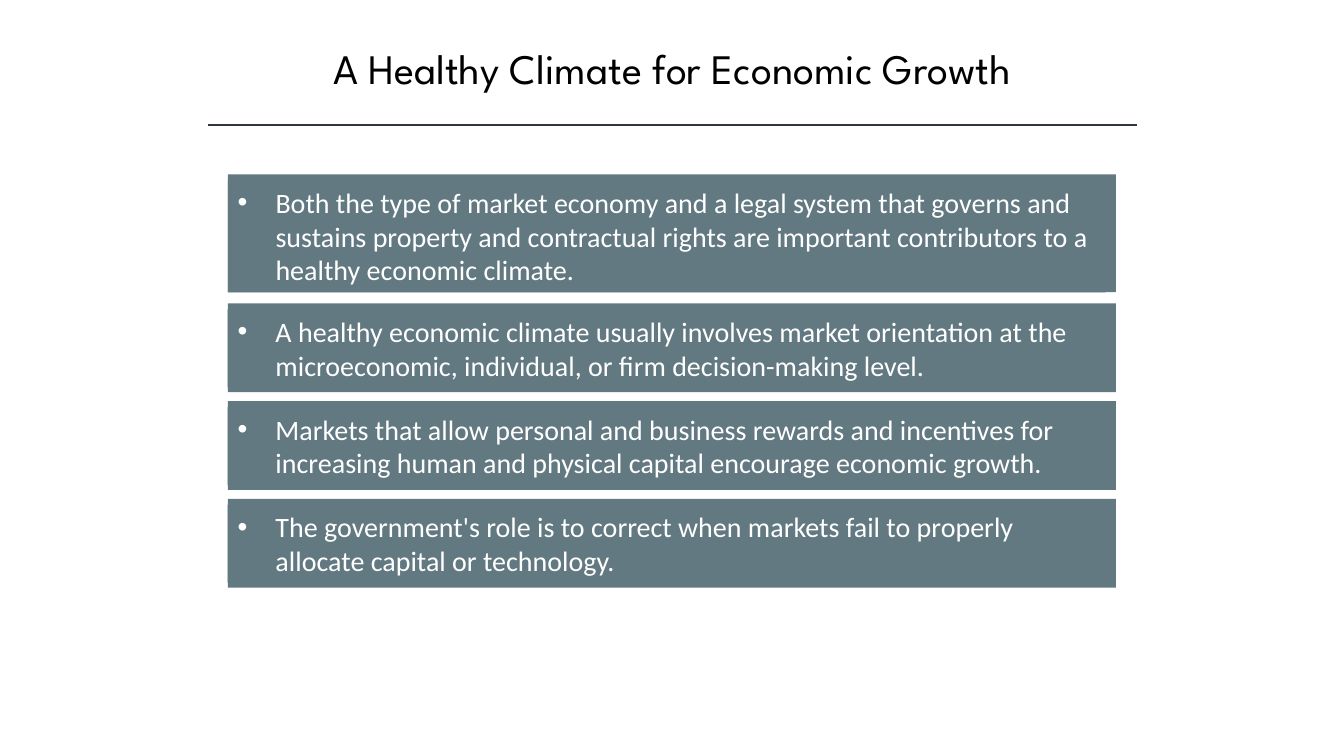
from dataclasses import dataclass

from lxml import etree
from pptx import Presentation
from pptx.dml.color import RGBColor
from pptx.enum import shapes, text
from pptx.oxml import ns
from pptx.util import Pt


@dataclass(frozen=True)
class Theme:
    ink: RGBColor = RGBColor(0x00, 0x00, 0x00)
    rule: RGBColor = RGBColor(0x32, 0x35, 0x42)
    panel: RGBColor = RGBColor(0x62, 0x79, 0x81)
    panel_text: RGBColor = RGBColor(0xFF, 0xFF, 0xFF)
    title_font: str = "League Spartan"
    body_font: str = "Calibri"
    title_size: int = 30
    body_size: int = 20


THEME = Theme()
PANEL_LEFT, PANEL_WIDTH = 162.72, 634.32
TEXT_DROP = 4.32
BULLET_INDENT = 27

# Top, panel height, text width, text height, wording
FIRST_POINT = (
    124.56, 84.24, 627.12, 79.92,
    "Both the type of market economy and a legal system that governs and "
    "sustains property and contractual rights are important contributors to a "
    "healthy economic climate.",
)
SHORT_POINTS = [
    "A healthy economic climate usually involves market orientation at the "
    "microeconomic, individual, or firm decision-making level.",
    "Markets that allow personal and business rewards and incentives for "
    "increasing human and physical capital encourage economic growth.",
    "The government's role is to correct when markets fail to properly "
    "allocate capital or technology.",
]
SHORT_TOP, SHORT_PITCH = 216.72, 69.84


def style_font(font, name, size, color):
    font.name = name
    font.size = Pt(size)
    font.color.rgb = color


def set_title(page, wording):
    title = page.shapes.title
    title.left, title.top = Pt(120.24), Pt(26.64)
    title.width, title.height = Pt(720), Pt(43.92)
    frame = title.text_frame
    frame.text = wording
    frame.auto_size = text.MSO_AUTO_SIZE.NONE
    frame.vertical_anchor = text.MSO_ANCHOR.TOP
    para = frame.paragraphs[0]
    para.alignment = text.PP_ALIGN.CENTER
    style_font(para.runs[0].font, THEME.title_font, THEME.title_size, THEME.ink)


def add_rule(page, left, right, top):
    rule = page.shapes.add_connector(
        shapes.MSO_CONNECTOR.STRAIGHT, Pt(left), Pt(top), Pt(right), Pt(top)
    )
    rule.line.color.rgb = THEME.rule
    rule.line.width = Pt(1)
    etree.SubElement(rule._element.spPr, ns.qn("a:effectLst"))


def add_panel(group, top, width, height):
    panel = group.shapes.add_shape(
        shapes.MSO_SHAPE.RECTANGLE, Pt(PANEL_LEFT), Pt(top), Pt(width), Pt(height)
    )
    panel.shadow.inherit = False
    panel.fill.solid()
    panel.fill.fore_color.rgb = THEME.panel
    panel.line.fill.background()
    return panel


def add_bullet(para):
    props = para._p.get_or_add_pPr()
    props.set("marL", str(Pt(BULLET_INDENT)))
    props.set("indent", str(-Pt(BULLET_INDENT)))
    etree.SubElement(props, ns.qn("a:buFont"), typeface="Arial")
    etree.SubElement(props, ns.qn("a:buChar"), char="•")


def add_point(page, top, height, text_width, text_height, wording):
    """Group a full-width panel with the bulleted text laid over it."""
    group = page.shapes.add_group_shape()
    add_panel(group, top, PANEL_WIDTH, height)
    box = add_panel(group, top + TEXT_DROP, text_width, text_height)
    frame = box.text_frame
    frame.word_wrap = True
    frame.auto_size = text.MSO_AUTO_SIZE.SHAPE_TO_FIT_TEXT
    frame.vertical_anchor = text.MSO_ANCHOR.TOP
    frame.text = wording
    para = frame.paragraphs[0]
    para.alignment = text.PP_ALIGN.LEFT
    add_bullet(para)
    style_font(para.runs[0].font, THEME.body_font, THEME.body_size, THEME.panel_text)


def main():
    deck = Presentation()
    deck.slide_width, deck.slide_height = Pt(960), Pt(540)
    page = deck.slides.add_slide(deck.slide_layouts.get_by_name("Title Only"))
    add_rule(page, 148.32, 812.16, 89.28)
    set_title(page, "A Healthy Climate for Economic Growth")
    add_point(page, *FIRST_POINT)
    for index, wording in enumerate(SHORT_POINTS):
        add_point(page, SHORT_TOP + index * SHORT_PITCH, 63.36, 614.88, 55.44, wording)
    deck.save("out.pptx")


if __name__ == "__main__":
    main()
